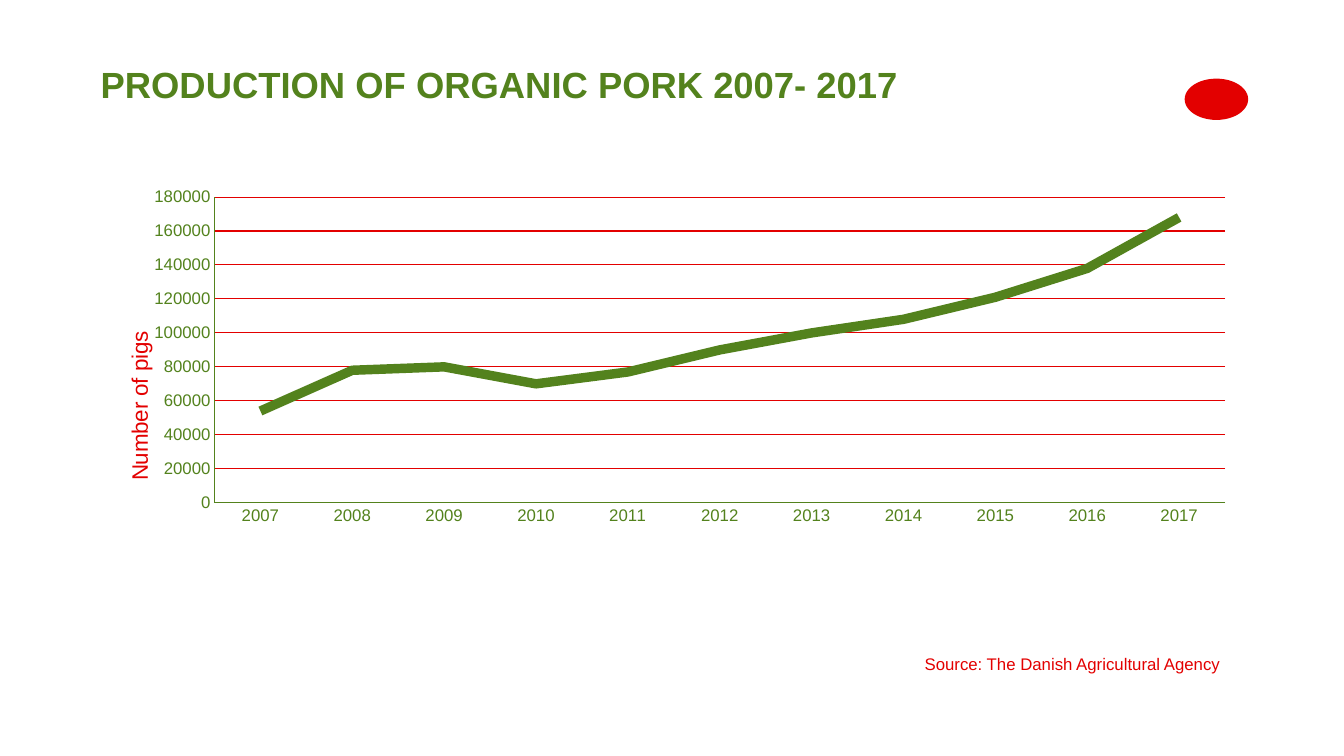
from lxml.etree import SubElement
from pptx import Presentation
from pptx.chart.data import CategoryChartData
from pptx.dml.color import RGBColor
from pptx.enum.chart import XL_CHART_TYPE as CT, XL_MARKER_STYLE, XL_TICK_MARK
from pptx.enum.shapes import MSO_SHAPE
from pptx.enum.text import MSO_ANCHOR
from pptx.oxml.ns import qn
from pptx.util import Inches, Pt

FONT, GREEN, RED = "Arial", "53821D", "E30000"
TITLE = "PRODUCTION OF ORGANIC PORK 2007- 2017"
SOURCE = "Source: The Danish Agricultural Agency"
AXIS_TITLE = "Number of pigs"
YEARS = [str(year) for year in range(2007, 2018)]
PIGS = [54000, 78000, 80000, 70000, 77000, 90000,
        100000, 108000, 121000, 138000, 168000]

# left, top, width, height in inches
TITLE_BOX = (0.9, 0.62, 11.47, 1.17)
CHART_BOX = (1.09, 1.79, 11.15, 4.86)
SOURCE_BOX = (9.17, 6.49, 3.19, 0.2)
EMBLEM_BOX = (11.75, 0.78, 0.63, 0.41)
# shares of the chart's size
PLOT_AREA = {"x": 0.093, "y": 0.034, "w": 0.899, "h": 0.624}
AXIS_TITLE_AT = {"x": 0.01, "y": 0.3}


def rgb(color):
    return RGBColor.from_string(color)


def inches(box):
    return [Inches(v) for v in box]


def style_font(font, size, color, bold=False):
    font.name, font.size, font.bold = FONT, Pt(size), bold
    font.color.rgb = rgb(color)


def style_line(line, color, width):
    line.color.rgb = rgb(color)
    line.width = Pt(width)


def add_text(slide, box, text, size, color, bold=False, inset=(0, 0), spacing=1.0):
    tf = slide.shapes.add_textbox(*inches(box)).text_frame
    tf.word_wrap = True
    tf.vertical_anchor = MSO_ANCHOR.TOP
    tf.margin_left = tf.margin_right = Inches(inset[0])
    tf.margin_top = tf.margin_bottom = Inches(inset[1])
    p = tf.paragraphs[0]
    p.text = text
    p.line_spacing = spacing
    style_font(p.runs[0].font, size, color, bold)


def set_layout(parent, index, shares, inner=False):
    """Place a chart part by shares of the chart's size."""
    for old in parent.findall(qn("c:layout")):
        parent.remove(old)
    layout = SubElement(parent, qn("c:layout"))
    parent.insert(index, layout)
    manual = SubElement(layout, qn("c:manualLayout"))
    if inner:
        SubElement(manual, qn("c:layoutTarget")).set("val", "inner")
    for key in "xy":
        SubElement(manual, qn(f"c:{key}Mode")).set("val", "edge")
    for key, share in shares.items():
        SubElement(manual, qn(f"c:{key}")).set("val", str(share))


def add_pig_chart(slide):
    data = CategoryChartData(number_format="General")
    data.categories = YEARS
    data.add_series("Series 1", PIGS)
    chart = slide.shapes.add_chart(CT.LINE, *inches(CHART_BOX), data).chart
    chart.has_title = chart.has_legend = False
    style_font(chart.font, 10, "000000")
    chart.plots[0].vary_by_categories = False

    series = chart.plots[0].series[0]
    series.smooth = False
    series.marker.style = XL_MARKER_STYLE.NONE
    style_line(series.format.line, GREEN, 6.75)

    value_axis = chart.value_axis
    for axis in (chart.category_axis, value_axis):
        axis.major_tick_mark = axis.minor_tick_mark = XL_TICK_MARK.NONE
        style_font(axis.tick_labels.font, 12, GREEN)
        style_line(axis.format.line, GREEN, 0.75)
    value_axis.minimum_scale, value_axis.maximum_scale = 0, 180000
    value_axis.major_unit = 20000
    value_axis.has_major_gridlines = True
    style_line(value_axis.major_gridlines.format.line, RED, 0.75)

    title = value_axis.axis_title
    tf = title.text_frame
    tf.text = AXIS_TITLE
    style_font(tf.paragraphs[0].runs[0].font, 16, RED)
    body = tf._txBody.find(qn("a:bodyPr"))
    body.set("rot", "-5400000")
    body.set("vert", "horz")
    set_layout(title._element, 1, AXIS_TITLE_AT)
    set_layout(chart._chartSpace.chart.plotArea, 0, PLOT_AREA, inner=True)


def add_emblem(slide):
    sp = slide.shapes.add_shape(MSO_SHAPE.OVAL, *inches(EMBLEM_BOX))
    sp.shadow.inherit = False
    sp.fill.solid()
    sp.fill.fore_color.rgb = rgb(RED)
    sp.line.fill.background()


def main():
    prs = Presentation()
    prs.slide_width, prs.slide_height = Inches(13.33), Inches(7.5)
    slide = prs.slides.add_slide(prs.slide_layouts[6])
    add_text(slide, TITLE_BOX, TITLE, 26, GREEN, bold=True,
             inset=(0.1, 0.05), spacing=0.9)
    add_pig_chart(slide)
    add_text(slide, SOURCE_BOX, SOURCE, 12, RED)
    add_emblem(slide)
    prs.save("out.pptx")


if __name__ == "__main__":
    main()
